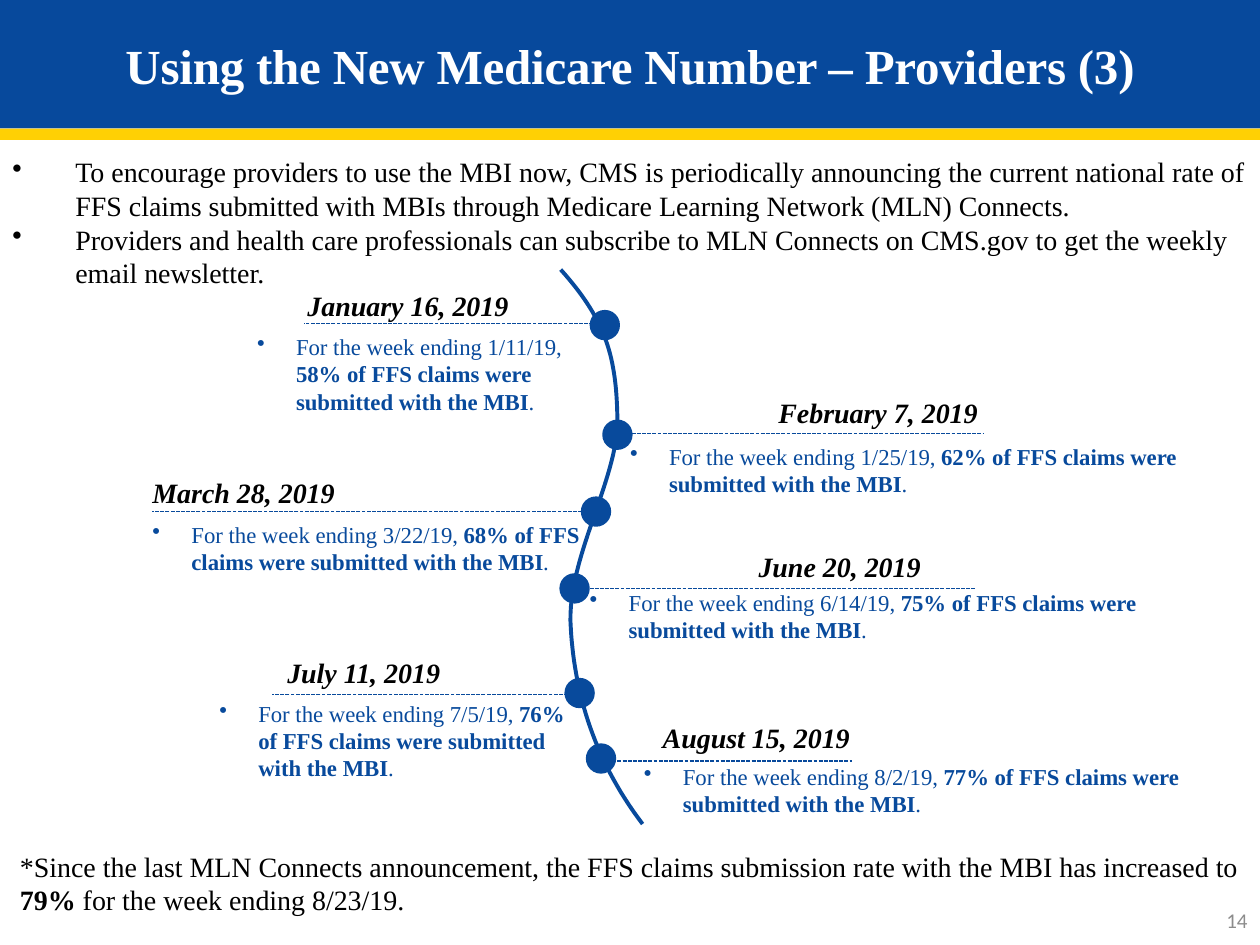
from lxml import etree
from pptx import Presentation
from pptx.dml.color import RGBColor
from pptx.enum.dml import MSO_LINE
from pptx.enum.shapes import MSO_CONNECTOR, MSO_SHAPE
from pptx.enum.text import MSO_ANCHOR, PP_ALIGN
from pptx.oxml.ns import qn
from pptx.util import Inches, Pt

RECTANGLE, OVAL = MSO_SHAPE.RECTANGLE, MSO_SHAPE.OVAL
STRAIGHT, DASH = MSO_CONNECTOR.STRAIGHT, MSO_LINE.SQUARE_DOT
LEFT, CENTER, RIGHT = PP_ALIGN.LEFT, PP_ALIGN.CENTER, PP_ALIGN.RIGHT
TOP, MIDDLE = MSO_ANCHOR.TOP, MSO_ANCHOR.MIDDLE

THEME = {
    "serif": "Times New Roman", "sans": "Calibri",
    "banner": RGBColor.from_string("07499C"),
    "stripe": RGBColor.from_string("FFD004"),
    "timeline": RGBColor.from_string("084A9C"),
    "white": RGBColor.from_string("FFFFFF"),
    "black": RGBColor.from_string("000000"),
    "gray": RGBColor.from_string("8C8C8C"),
    "title": 28, "body": 16, "detail": 13, "page": 12,
}

# The slide is a grid of 100 columns by 75 rows of square cells
COLUMNS, ROWS = 100, 75
deck = Presentation()
deck.slide_width, deck.slide_height = Inches(10), Inches(7.5)
CELL = deck.slide_width / COLUMNS
slide = deck.slides.add_slide(deck.slide_layouts[6])
shapes = slide.shapes


def grid(*cells):
    return [round(cell * CELL) for cell in cells]


def write(text, at, size="body", color="black", font="serif", align=LEFT,
          anchor=TOP, insets=(1, 0.5, 1, 0.5), hang=0, bold=False,
          italic=False, spacing=0):
    """Each line is a paragraph; parts between ** marks are bold."""
    frame = shapes.add_textbox(*grid(*at)).text_frame
    frame.word_wrap = True
    frame.vertical_anchor = anchor
    (frame.margin_left, frame.margin_top,
     frame.margin_right, frame.margin_bottom) = grid(*insets)
    for number, line in enumerate(text.split("\n")):
        paragraph = frame.add_paragraph() if number else frame.paragraphs[0]
        paragraph.alignment = align
        if hang:
            properties = paragraph._p.get_or_add_pPr()
            indent = grid(hang)[0]
            properties.set("marL", str(indent))
            properties.set("indent", str(-indent))
            etree.SubElement(properties, qn("a:buChar")).set("char", "•")
        for index, part in enumerate(line.split("**")):
            run = paragraph.add_run()
            run.text = part
            run.font.name = THEME[font]
            run.font.size = Pt(THEME[size])
            run.font.color.rgb = THEME[color]
            run.font.bold = bold or index % 2 == 1
            run.font.italic = italic
            if spacing:
                run._r.get_or_add_rPr().set("spc", str(spacing))


# Banner and stripe
for top, height, color in [(0, 10.2, "banner"), (10.2, 0.9, "stripe")]:
    band = shapes.add_shape(RECTANGLE, *grid(0, top, COLUMNS, height))
    band.shadow.inherit = False
    band.fill.solid()
    band.fill.fore_color.rgb = THEME[color]
    band.line.fill.background()

write("Using the New Medicare Number – Providers (3)", (0, 2.8, COLUMNS, 4.7),
      size="title", color="white", align=CENTER, insets=(0, 0, 0, 0),
      bold=True, spacing=-10)
write("14", (76.7, 71, 23.3, 4), size="page", color="gray", font="sans",
      align=RIGHT, anchor=MIDDLE)

# Introduction
write("To encourage providers to use the MBI now, CMS is periodically "
      "announcing the current national rate of FFS claims submitted with MBIs "
      "through Medicare Learning Network (MLN) Connects.\n"
      "Providers and health care professionals can subscribe to MLN Connects "
      "on CMS.gov to get the weekly email newsletter.",
      (0, 11.8, COLUMNS, 11.8), hang=5)

# Timeline spine: three cubic Bézier arcs, sampled evenly
STEPS = 30
spine_start = (44.5, 21.4)
arcs = [
    ((48.1, 25.4), (48.9, 28.3), (49, 33.1)),
    ((49.2, 37.8), (44.9, 44.4), (45.3, 49.8)),
    ((45.6, 55.1), (47.2, 60.4), (51, 65.4)),
]
spine_points, start = [], spine_start
for bend_out, bend_in, end in arcs:
    for step in range(1, STEPS + 1):
        t = step / STEPS
        spine_points.append([
            a * (1 - t) ** 3 + 3 * b * t * (1 - t) ** 2
            + 3 * c * t ** 2 * (1 - t) + d * t ** 3
            for a, b, c, d in zip(start, bend_out, bend_in, end)])
    start = end
builder = shapes.build_freeform(*grid(*spine_start))
builder.add_line_segments([grid(*point) for point in spine_points], close=False)
spine = builder.convert_to_shape()
spine.shadow.inherit = False
spine.fill.background()
spine.line.color.rgb = THEME["timeline"]
spine.line.width = Pt(2.25)

# Milestones: date, week ending, rate, dot corner, rule (from, to, row),
# date box (left, top, width, alignment), detail box (left, top, width)
milestones = [
    ("January 16, 2019", "1/11/19", 58, (46.9, 24.7), (47.9, 24.1, 25.7),
     (24.4, 22.9, 26.9, LEFT), (20.4, 26, 27.4)),
    ("February 7, 2019", "1/25/19", 62, (47.9, 33.4), (48.5, 78, 34.4),
     (59.8, 31.4, 17.8, RIGHT), (50, 34.7, 45.8)),
    ("March 28, 2019", "3/22/19", 68, (46.2, 39.5), (46.2, 12.1, 40.6),
     (12.1, 37.7, 18.3, LEFT), (12.1, 40.9, 34)),
    ("June 20, 2019", "6/14/19", 75, (44.5, 45.6), (46.8, 77.4, 46.7),
     (60.2, 43.6, 16.1, LEFT), (46.8, 46.3, 46.3)),
    ("July 11, 2019", "7/5/19", 76, (44.9, 53.9), (46.3, 21.6, 55.1),
     (22.8, 52, 14.9, LEFT), (17.4, 55.1, 28.1)),
    ("August 15, 2019", "8/2/19", 77, (46.6, 59.1), (48.6, 67.6, 60.4),
     (52.6, 57.2, 18.5, LEFT), (51.1, 60.1, 43.4)),
]
DOT, DATE_HEIGHT, DETAIL_HEIGHT = 2.2, 3.1, 7.5
for date, week, rate, corner, rule_span, date_box, detail_box in milestones:
    rule_from, rule_to, row = rule_span
    rule = shapes.add_connector(STRAIGHT, *grid(rule_from, row, rule_to, row))
    etree.SubElement(rule._element.spPr, qn("a:effectLst"))
    rule.line.color.rgb = THEME["timeline"]
    rule.line.width = Pt(0.75)
    rule.line.dash_style = DASH

    dot = shapes.add_shape(OVAL, *grid(*corner, DOT, DOT))
    dot.shadow.inherit = False
    dot.fill.solid()
    dot.fill.fore_color.rgb = THEME["timeline"]
    dot.line.color.rgb = THEME["timeline"]
    dot.line.width = Pt(1.5)

    *date_place, date_align = date_box
    write(date, (*date_place, DATE_HEIGHT), align=date_align,
          insets=(0, 0, 0, 0.4), bold=True, italic=True)
    write(f"For the week ending {week}, **{rate}% of FFS claims were "
          "submitted with the MBI**.", (*detail_box, DETAIL_HEIGHT),
          size="detail", color="timeline", insets=(0, 0.4, 0, 0), hang=3.1)

# Closing remark
write("*Since the last MLN Connects announcement, the FFS claims submission "
      "rate with the MBI has increased to **79%** for the week ending 8/23/19.",
      (0.6, 66.9, COLUMNS, 6.4))

deck.save("out.pptx")
